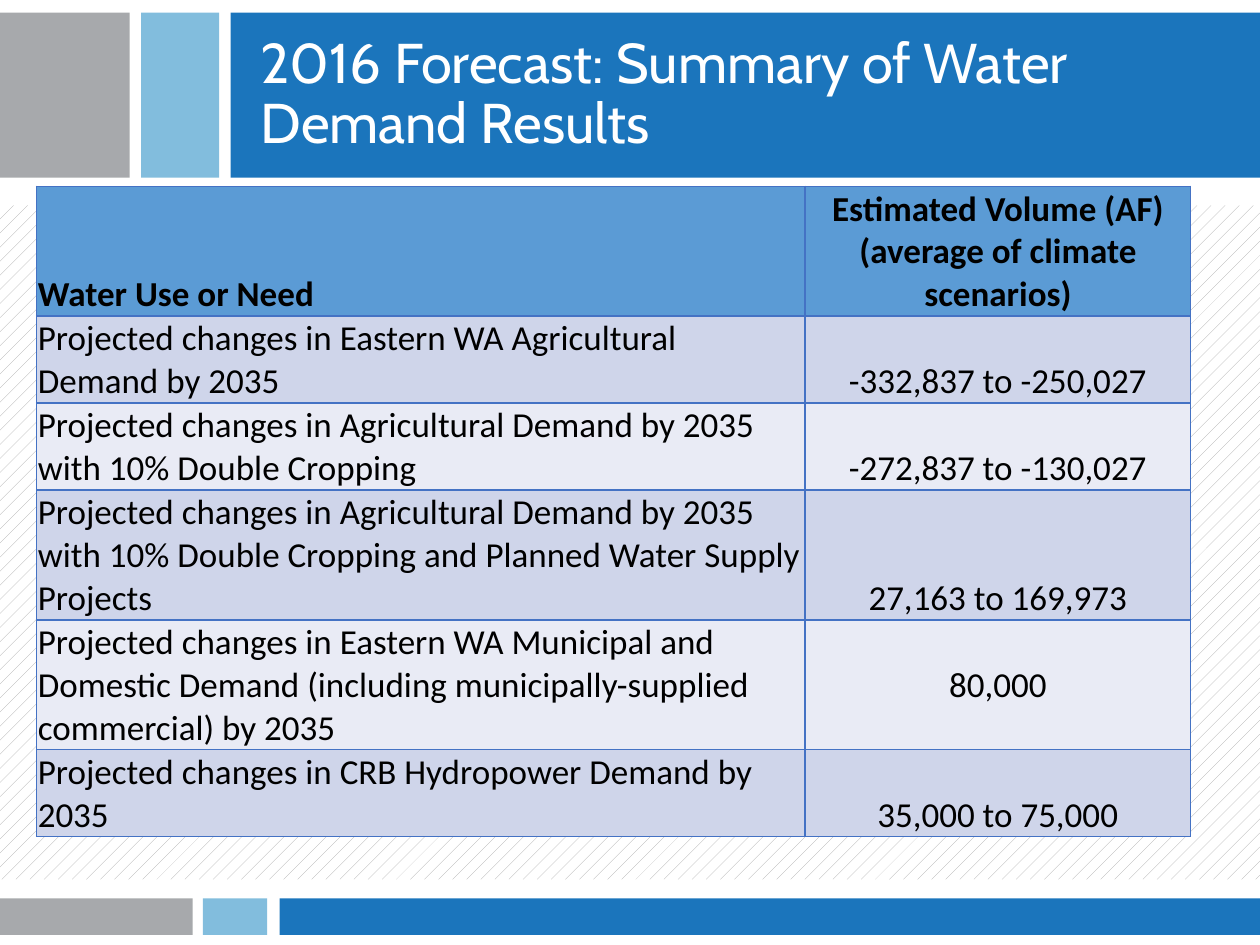
import pptx
import pptx.dml.color
import pptx.enum.dml
import pptx.enum.shapes
import pptx.enum.text
import pptx.oxml
import pptx.oxml.ns
import pptx.util
from pptx.dml.color import RGBColor
from pptx.enum.text import MSO_ANCHOR, PP_ALIGN
from pptx.util import Inches, Pt

WHITE = RGBColor(0xFF, 0xFF, 0xFF)
BLACK = RGBColor(0x00, 0x00, 0x00)
HATCH_GREY = RGBColor(0xA6, 0xA6, 0xA6)
GREY = RGBColor(0xA7, 0xA9, 0xAC)
LIGHT_BLUE = RGBColor(0x82, 0xBD, 0xDD)
BLUE = RGBColor(0x1B, 0x75, 0xBC)
HEADER_FILL = RGBColor(0x5B, 0x9B, 0xD5)
BAND_FILLS = (RGBColor(0xCF, 0xD5, 0xEA), RGBColor(0xE9, 0xEB, 0xF5))
BORDER = RGBColor(0x44, 0x72, 0xC4)

# Each strip: top, height, then left and width of its grey, light blue and blue blocks
STRIPS = [
    (0.1, 1.31, [(0, 1.03), (1.12, 0.62), (1.83, 8.17)]),
    (7.13, 0.29, [(0, 1.53), (1.61, 0.51), (2.22, 7.78)]),
]

# Each row: height, need, volume paragraphs
ROWS = [
    (1.03, "Water Use or Need", ["Estimated Volume (AF)", "(average of climate scenarios)"]),
    (0.69, "Projected changes in Eastern WA Agricultural Demand by 2035",
     ["-332,837 to -250,027"]),
    (0.69, "Projected changes in Agricultural Demand by 2035 with 10% Double Cropping",
     ["-272,837 to -130,027"]),
    (1.03, "Projected changes in Agricultural Demand by 2035 with 10% Double Cropping "
           "and Planned Water Supply Projects", ["27,163 to 169,973"]),
    (1.03, "Projected changes in Eastern WA Municipal and Domestic Demand "
           "(including municipally-supplied commercial) by 2035", ["80,000"]),
    (0.69, "Projected changes in CRB Hydropower Demand by 2035", ["35,000 to 75,000"]),
]
COLUMN_WIDTHS = (6.1, 3.06)
MUNICIPAL_ROW = 4


def add_block(s, left, top, width, height):
    """Add a plain rectangle without line or shadow; the caller fills it."""
    block = s.shapes.add_shape(pptx.enum.shapes.MSO_SHAPE.RECTANGLE, Inches(left),
                               Inches(top), Inches(width), Inches(height))
    block.shadow.inherit = False
    block.line.fill.background()
    return block


def add_hatched_background(s):
    fill = add_block(s, 0, 1.63, 10, 5.35).fill
    fill.patterned()
    fill.pattern = pptx.enum.dml.MSO_PATTERN.PERCENT_10
    fill.fore_color.rgb = HATCH_GREY
    fill.back_color.rgb = WHITE


def add_strip(s, top, height, spans):
    for (left, width), color in zip(spans, (GREY, LIGHT_BLUE, BLUE)):
        block = add_block(s, left, top, width, height)
        block.fill.solid()
        block.fill.fore_color.rgb = color


def add_run(p, text, font, size, color, bold=False):
    r = p.add_run()
    r.text = text
    r.font.name = font
    r.font.size = Pt(size)
    r.font.bold = bold
    r.font.color.rgb = color


def add_title(s, text):
    sp = s.shapes.add_textbox(Inches(1.97), Inches(0.03), Inches(7.48), Inches(1.45))
    tf = sp.text_frame
    tf.word_wrap = True
    tf.vertical_anchor = MSO_ANCHOR.MIDDLE
    p = tf.paragraphs[0]
    p.line_spacing = 0.9
    add_run(p, text, "Cabin", 32, WHITE)


def set_borders(cell):
    tc_pr = cell._tc.get_or_add_tcPr()
    for position, side in enumerate(("lnL", "lnR", "lnT", "lnB")):
        tc_pr.insert(position, pptx.oxml.parse_xml(
            f'<a:{side} {pptx.oxml.ns.nsdecls("a")} w="{Pt(1)}">'
            f'<a:solidFill><a:srgbClr val="{BORDER}"/></a:solidFill></a:{side}>'))


def fill_cell(cell, paragraphs, align, fill, bold):
    cell.fill.solid()
    cell.fill.fore_color.rgb = fill
    cell.vertical_anchor = MSO_ANCHOR.BOTTOM
    cell.margin_left = cell.margin_right = cell.margin_top = Inches(0.01)
    cell.margin_bottom = 0
    set_borders(cell)
    tf = cell.text_frame
    for i, text in enumerate(paragraphs):
        p = tf.add_paragraph() if i else tf.paragraphs[0]
        p.alignment = align
        add_run(p, text, "Calibri", 20, BLACK, bold)


def add_demand_table(s):
    height = sum(row[0] for row in ROWS)
    table = s.shapes.add_table(len(ROWS), len(COLUMN_WIDTHS), Inches(0.29), Inches(1.48),
                               Inches(sum(COLUMN_WIDTHS)), Inches(height)).table
    for column, width in zip(table.columns, COLUMN_WIDTHS):
        column.width = Inches(width)
    for i, (row_height, need, volume) in enumerate(ROWS):
        table.rows[i].height = Inches(row_height)
        is_header = i == 0
        fill = HEADER_FILL if is_header else BAND_FILLS[(i - 1) % 2]
        fill_cell(table.cell(i, 0), [need], PP_ALIGN.LEFT, fill, is_header)
        fill_cell(table.cell(i, 1), volume, PP_ALIGN.CENTER, fill, is_header)
    table.cell(MUNICIPAL_ROW, 1).vertical_anchor = MSO_ANCHOR.MIDDLE


def main():
    prs = pptx.Presentation()
    prs.slide_width, prs.slide_height = Inches(10), Inches(7.5)
    s = prs.slides.add_slide(prs.slide_layouts[6])
    add_hatched_background(s)
    for strip in STRIPS:
        add_strip(s, *strip)
    add_title(s, "2016 Forecast: Summary of Water Demand Results")
    add_demand_table(s)
    prs.save("out.pptx")


if __name__ == "__main__":
    main()
